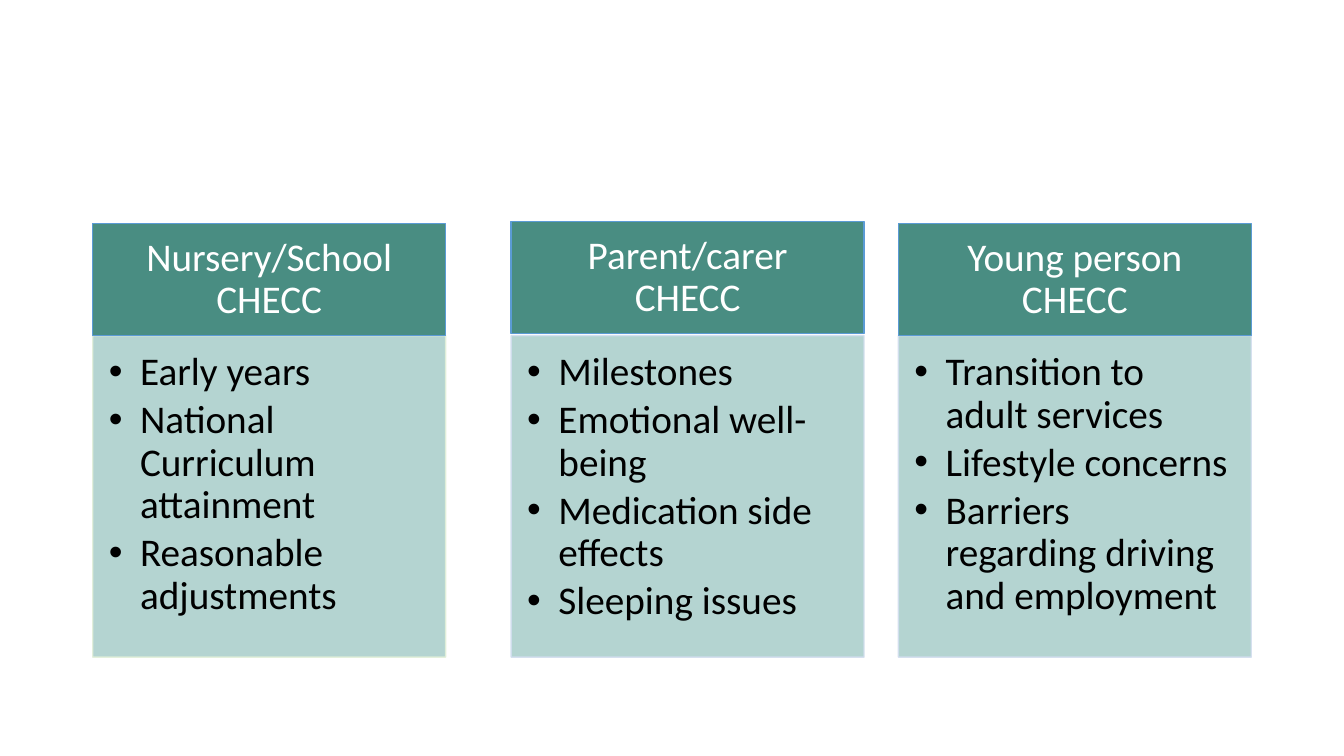
from dataclasses import dataclass

from lxml import etree
from pptx import Presentation
from pptx.dml.color import RGBColor
from pptx.enum.shapes import MSO_SHAPE
from pptx.enum.text import MSO_ANCHOR, MSO_AUTO_SIZE, PP_ALIGN
from pptx.oxml.ns import qn
from pptx.util import Inches, Pt

RECTANGLE = MSO_SHAPE.RECTANGLE
TOP, MIDDLE = MSO_ANCHOR.TOP, MSO_ANCHOR.MIDDLE
LEFT, CENTER = PP_ALIGN.LEFT, PP_ALIGN.CENTER
NO_AUTOFIT = MSO_AUTO_SIZE.NONE

TEAL = RGBColor(0x49, 0x8D, 0x82)
PALE_TEAL = RGBColor(0xAC, 0xD0, 0xCC)
BLUE = RGBColor(0x5B, 0x9B, 0xD5)
PALE_GREEN = RGBColor(0xE2, 0xF0, 0xD9)
PALE_BLUE = RGBColor(0xD2, 0xDE, 0xEF)
WHITE = RGBColor(0xFF, 0xFF, 0xFF)
BLACK = RGBColor(0x00, 0x00, 0x00)

SLIDE_WIDTH, SLIDE_HEIGHT = Inches(13.33), Inches(7.5)
COMPARISON_LAYOUT = 4

# Shares of the slide's size, in percent
COLUMN_WIDTH = 26.26
HEADING_HEIGHT = 14.8
LIST_TOP, LIST_HEIGHT = 44.4, 42.53

# Insets in inches: left, top, right, bottom
HEADING_INSETS = (0.22, 0.12, 0.22, 0.12)
LIST_INSETS = (0.16, 0.16, 0.22, 0.24)
BULLET_INDENT = Inches(0.31)


@dataclass(frozen=True)
class Column:
    left: float
    heading_top: float
    placeholder: int
    list_border: RGBColor
    heading: str
    items: tuple[str, ...]


COLUMNS = (
    Column(6.9, 29.6, 2, PALE_GREEN, "Nursery/School CHECC",
           ("Early years", "National Curriculum attainment", "Reasonable adjustments")),
    Column(38.03, 29.33, 3, PALE_BLUE, "Parent/carer CHECC",
           ("Milestones", "Emotional well-being", "Medication side effects",
            "Sleeping issues")),
    Column(66.84, 29.6, 4, PALE_BLUE, "Young person CHECC",
           ("Transition to adult services", "Lifestyle concerns",
            "Barriers regarding driving and employment")),
)


def place(shape, left: float, top: float, height: float) -> None:
    shape.left = round(SLIDE_WIDTH * left / 100)
    shape.top = round(SLIDE_HEIGHT * top / 100)
    shape.width = round(SLIDE_WIDTH * COLUMN_WIDTH / 100)
    shape.height = round(SLIDE_HEIGHT * height / 100)


def paint(shape, fill: RGBColor, border: RGBColor) -> None:
    shape.fill.solid()
    shape.fill.fore_color.rgb = fill
    shape.line.color.rgb = border
    shape.line.width = Pt(1)


def make_translucent(shape, percent: int) -> None:
    for color in shape._element.spPr.iter(qn("a:srgbClr")):
        etree.SubElement(color, qn("a:alpha"), val=str(percent * 1000))


def write(shape, lines: tuple[str, ...], color: RGBColor, alignment: PP_ALIGN,
          anchor: MSO_ANCHOR, insets: tuple[float, ...], space_after: float) -> None:
    frame = shape.text_frame
    frame.text = "\n".join(lines)
    frame.word_wrap = True
    frame.auto_size = NO_AUTOFIT
    frame.vertical_anchor = anchor
    (frame.margin_left, frame.margin_top,
     frame.margin_right, frame.margin_bottom) = map(Inches, insets)
    for paragraph in frame.paragraphs:
        paragraph.alignment = alignment
        paragraph.line_spacing = 0.9
        paragraph.space_before = Pt(0)
        paragraph.space_after = Pt(space_after)
        paragraph.font.name = "Calibri"
        paragraph.font.size = Pt(28)
        paragraph.font.bold = False
        paragraph.font.color.rgb = color


def add_bullets(shape) -> None:
    for paragraph in shape.text_frame.paragraphs:
        properties = paragraph._p.get_or_add_pPr()
        properties.set("marL", str(BULLET_INDENT))
        properties.set("indent", str(-BULLET_INDENT))
        # Bullet elements stand before the default run properties
        bullet_font = etree.Element(qn("a:buFont"), typeface="Arial")
        bullet = etree.Element(qn("a:buChar"), char="•")
        run_defaults = properties.find(qn("a:defRPr"))
        run_defaults.addprevious(bullet_font)
        run_defaults.addprevious(bullet)


def draw_column(slide, column: Column) -> None:
    # List panel
    panel = slide.placeholders[column.placeholder]
    place(panel, column.left, LIST_TOP, LIST_HEIGHT)
    paint(panel, PALE_TEAL, column.list_border)
    make_translucent(panel, 90)
    write(panel, column.items, BLACK, LEFT, TOP, LIST_INSETS, 4.2)
    add_bullets(panel)

    # Heading box
    heading = slide.shapes.add_shape(RECTANGLE, 0, 0, 0, 0)
    heading.shadow.inherit = False
    place(heading, column.left, column.heading_top, HEADING_HEIGHT)
    paint(heading, TEAL, BLUE)
    write(heading, (column.heading,), WHITE, CENTER, MIDDLE, HEADING_INSETS, 0)


def main() -> None:
    presentation = Presentation()
    presentation.slide_width, presentation.slide_height = SLIDE_WIDTH, SLIDE_HEIGHT
    slide = presentation.slides.add_slide(presentation.slide_layouts[COMPARISON_LAYOUT])

    for column in COLUMNS:
        draw_column(slide, column)

    # Unused placeholders
    for placeholder in list(slide.placeholders):
        if not placeholder.text_frame.text:
            placeholder._element.getparent().remove(placeholder._element)

    presentation.save("out.pptx")


if __name__ == "__main__":
    main()
